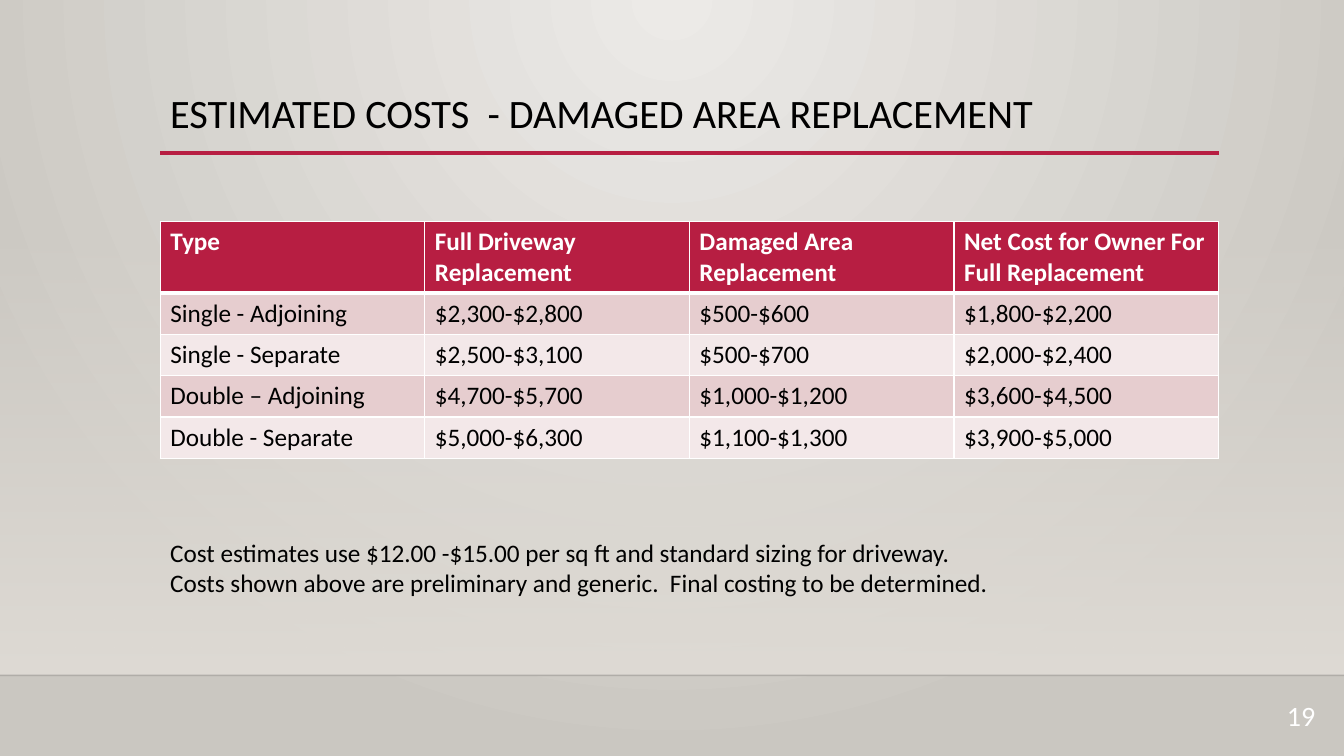
import pptx
import pptx.dml.color
import pptx.enum.shapes
import pptx.enum.text
import pptx.oxml
import pptx.oxml.ns
import pptx.util

Cm = pptx.util.Cm
Pt = pptx.util.Pt
RGBColor = pptx.dml.color.RGBColor
ALIGN = pptx.enum.text.PP_ALIGN
NS = pptx.oxml.ns.nsdecls("a")
qn = pptx.oxml.ns.qn

BLACK = RGBColor(0x00, 0x00, 0x00)
WHITE = RGBColor(0xFF, 0xFF, 0xFF)
CRIMSON = RGBColor(0xB7, 0x1E, 0x42)
BAND_DARK = RGBColor(0xE6, 0xCD, 0xCF)
BAND_LIGHT = RGBColor(0xF3, 0xE8, 0xE9)
GLOW = RGBColor(0xEC, 0xEA, 0xE7)
STONE = RGBColor(0xCA, 0xC7, 0xC1)
SAND = RGBColor(0xDF, 0xDB, 0xD5)

SLIDE_W, SLIDE_H = 33.87, 19.05
LEFT, WIDTH = 4.04, 26.67
FLOOR = 17.02

COSTS = [
    ["Type", "Full Driveway Replacement", "Damaged Area Replacement",
     "Net Cost for Owner For Full Replacement"],
    ["Single - Adjoining", "$2,300-$2,800", "$500-$600", "$1,800-$2,200"],
    ["Single - Separate", "$2,500-$3,100", "$500-$700", "$2,000-$2,400"],
    ["Double – Adjoining", "$4,700-$5,700", "$1,000-$1,200", "$3,600-$4,500"],
    ["Double - Separate", "$5,000-$6,300", "$1,100-$1,300", "$3,900-$5,000"],
]
NOTES = ("Cost estimates use $12.00 -$15.00 per sq ft and standard sizing for driveway.\n"
         "Costs shown above are preliminary and generic.  Final costing to be determined.")


def write_text(frame, text, size=18, color=BLACK, bold=False, align=ALIGN.LEFT,
               spacing=None, font="Calibri"):
    frame.word_wrap = True
    frame.text = text
    for paragraph in frame.paragraphs:
        paragraph.alignment = align
        paragraph.line_spacing = spacing
        for run in paragraph.runs:
            run.font.name = font
            run.font.size = Pt(size)
            run.font.bold = bold
            run.font.color.rgb = color


def set_alpha(color_element, percent):
    color_element.append(pptx.oxml.parse_xml(f'<a:alpha {NS} val="{percent * 1000}"/>'))


def set_gradient(fill, first, last):
    fill.gradient()
    for stop, color in zip(fill.gradient_stops, (first, last)):
        stop.color.rgb = color


class CostSlide:
    def __init__(self, deck):
        self.slide = deck.slides.add_slide(deck.slide_layouts[6])
        self.shapes = self.slide.shapes

    def background(self, inner, outer):
        set_gradient(self.slide.background.fill, inner, outer)
        gradient = next(self.slide.element.iter(qn("a:gradFill")))
        gradient.replace(gradient.find(qn("a:lin")), pptx.oxml.parse_xml(
            f'<a:path {NS} path="circle">'
            '<a:fillToRect l="43000" t="0" r="43000" b="100000"/></a:path>'))

    def fading_panel(self, top, height, color):
        panel = self.shapes.add_shape(pptx.enum.shapes.MSO_SHAPE.RECTANGLE,
                                      0, Cm(top), Cm(SLIDE_W), Cm(height))
        panel.shadow.inherit = False
        panel.line.fill.background()
        set_gradient(panel.fill, color, color)
        panel.fill.gradient_angle = 270
        set_alpha(next(panel.element.iter(qn("a:srgbClr"))), 0)

    def rule(self, left, right, y, color, weight, alpha=None):
        line = self.shapes.add_connector(pptx.enum.shapes.MSO_CONNECTOR.STRAIGHT,
                                         Cm(left), Cm(y), Cm(right), Cm(y))
        line.line.color.rgb = color
        line.line.width = Pt(weight)
        if alpha is not None:
            set_alpha(next(line.element.iter(qn("a:srgbClr"))), alpha)
        line.element.spPr.append(pptx.oxml.parse_xml(f"<a:effectLst {NS}/>"))

    def text(self, left, top, width, height, text, grow=False, **style):
        box = self.shapes.add_textbox(Cm(left), Cm(top), Cm(width), Cm(height))
        write_text(box.text_frame, text, **style)
        if grow:
            box.text_frame.auto_size = pptx.enum.text.MSO_AUTO_SIZE.SHAPE_TO_FIT_TEXT

    def table(self, left, top, width, rows, header_height, row_height):
        height = header_height + row_height * (len(rows) - 1)
        table = self.shapes.add_table(len(rows), len(rows[0]), Cm(left), Cm(top),
                                      Cm(width), Cm(height)).table
        table.first_row = table.horz_banding = False
        for r, values in enumerate(rows):
            header = r == 0
            table.rows[r].height = Cm(header_height if header else row_height)
            fill = CRIMSON if header else (BAND_LIGHT, BAND_DARK)[r % 2]
            borders = {"L": 1, "R": 1, "T": 3 if r == 1 else 1, "B": 3 if header else 1}
            for c, value in enumerate(values):
                self.cell(table.cell(r, c), value, fill, borders,
                          color=WHITE if header else BLACK, bold=header)

    def cell(self, cell, text, fill, borders, **style):
        write_text(cell.text_frame, text, **style)
        properties = cell._tc.get_or_add_tcPr()
        for side, weight in borders.items():
            properties.append(pptx.oxml.parse_xml(
                f'<a:ln{side} {NS} w="{Pt(weight)}"><a:solidFill>'
                f'<a:srgbClr val="{WHITE}"/></a:solidFill></a:ln{side}>'))
        cell.fill.solid()
        cell.fill.fore_color.rgb = fill


def main():
    deck = pptx.Presentation()
    deck.slide_width, deck.slide_height = Cm(SLIDE_W), Cm(SLIDE_H)
    page = CostSlide(deck)

    # Backdrop
    page.background(GLOW, STONE)
    page.fading_panel(5.61, FLOOR - 5.61, SAND)
    page.rule(0, SLIDE_W, FLOOR, BLACK, 1, alpha=20)

    # Title
    page.rule(LEFT, LEFT + WIDTH, 3.86, CRIMSON, 2.5)
    page.text(LEFT, 2.24, WIDTH, 2.11, "ESTIMATED COSTS  - DAMAGED AREA REPLACEMENT",
              size=28.8, spacing=0.9)

    # Costs and notes
    page.table(LEFT, 5.59, WIDTH, COSTS, header_height=1.8, row_height=1.04)
    page.text(LEFT, 13.41, WIDTH, 1.8, NOTES, grow=True)

    # Page number
    page.text(31.5, 17.48, 1.9, 1.27, "19", size=20, color=WHITE, align=ALIGN.RIGHT)

    deck.save("out.pptx")


if __name__ == "__main__":
    main()
